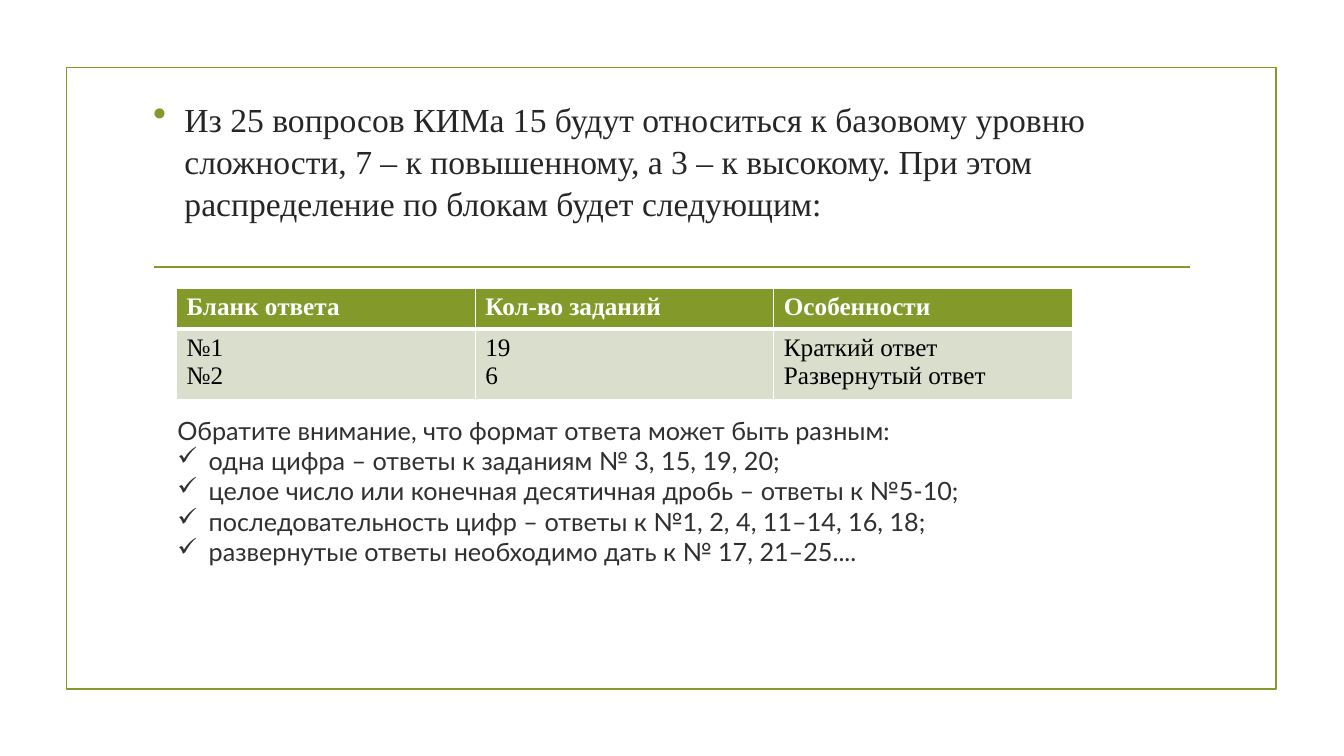
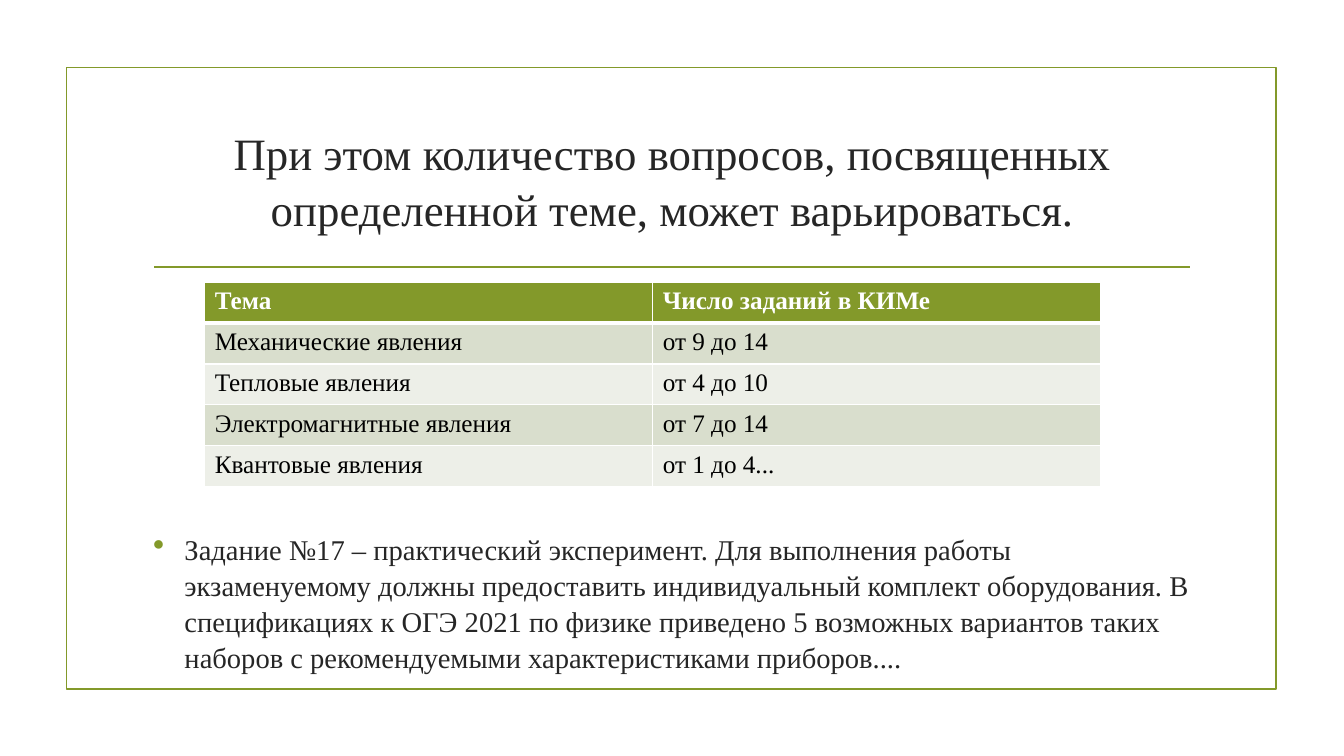
from pptx import Presentation
from pptx.dml.color import RGBColor
from pptx.enum.shapes import MSO_CONNECTOR as Connector, MSO_SHAPE as Shape
from pptx.enum.text import MSO_ANCHOR as Anchor, PP_ALIGN as Align
from pptx.oxml.ns import qn
from pptx.util import Cm, Pt
from lxml.etree import SubElement

GREEN, WHITE, BLACK = "83992A", "FFFFFF", "000000"
INK, NOTE_INK = "262626", "303030"
BANDS = ("D9DECD", "EDEFE8")
SERIF, SANS = "Times New Roman", "Lato"
CONTENT_LEFT, CONTENT_WIDTH = 3.61, 26.67
INDENT = 0.79
ROW_HEIGHT, TABLE_WIDTH = 1.03, 22.58


def color(value):
    return RGBColor.from_string(value)


def add_bullet(para, char, tint=None, percent=None):
    props = para._p.get_or_add_pPr()
    props.set("marL", str(Cm(INDENT)))
    props.set("indent", str(-Cm(INDENT)))
    if tint:
        SubElement(SubElement(props, qn("a:buClr")), qn("a:srgbClr"), val=tint)
    if percent:
        SubElement(props, qn("a:buSzPct"), val=str(percent * 1000))
    SubElement(props, qn("a:buChar"), char=char)


def add_border(cell, side, points):
    line = SubElement(cell._tc.get_or_add_tcPr(), qn("a:ln" + side), w=str(Pt(points)))
    SubElement(SubElement(line, qn("a:solidFill")), qn("a:srgbClr"), val=WHITE)


class Slides:
    """Holds the shared style and the current page."""

    def __init__(self):
        self.deck = Presentation()
        self.deck.slide_width, self.deck.slide_height = Cm(33.87), Cm(19.05)
        self.page = None

    def new_page(self):
        """Start a page with the green frame and the rule under the heading."""
        self.page = self.deck.slides.add_slide(self.deck.slide_layouts[6])
        frame = self.page.shapes.add_shape(
            Shape.RECTANGLE, Cm(1.68), Cm(1.7), Cm(30.48), Cm(15.67))
        frame.shadow.inherit = False
        frame.fill.background()
        rule = self.page.shapes.add_connector(
            Connector.STRAIGHT, Cm(3.89), Cm(6.73), Cm(30), Cm(6.73))
        SubElement(rule._element.spPr, qn("a:effectLst"))
        for outline in (frame.line, rule.line):
            outline.color.rgb = color(GREEN)
            outline.width = Pt(1.25)

    def text_box(self, left, top, width, height):
        box = self.page.shapes.add_textbox(Cm(left), Cm(top), Cm(width), Cm(height))
        box.text_frame.word_wrap = True
        return box.text_frame

    def add_lines(self, frame, lines, size, ink, font=SERIF, bold=False):
        """Add one paragraph per line and return the paragraphs."""
        for number, line in enumerate(lines):
            para = frame.add_paragraph() if number else frame.paragraphs[0]
            span = para.add_run()
            span.text = line
            span.font.size, span.font.name, span.font.bold = Pt(size), font, bold
            span.font.color.rgb = color(ink)
        return frame.paragraphs

    def title(self, text):
        frame = self.text_box(CONTENT_LEFT, 2.72, CONTENT_WIDTH, 3.63)
        frame.vertical_anchor = Anchor.MIDDLE
        para = self.add_lines(frame, [text], 32, INK)[0]
        para.alignment = Align.CENTER
        para.line_spacing = 1.03

    def bullet_text(self, top, height, text, size):
        frame = self.text_box(CONTENT_LEFT, top, CONTENT_WIDTH, height)
        para = self.add_lines(frame, [text], size, INK)[0]
        para.line_spacing = 1.05
        add_bullet(para, "•", GREEN, 115)

    def checklist(self, left, top, width, height, intro, items):
        frame = self.text_box(left, top, width, height)
        paras = self.add_lines(frame, [intro, *items], 18, NOTE_INK, SANS)
        for para in paras[1:]:
            add_bullet(para, "✓")

    def table(self, left, top, rows):
        """Draw a banded table; each cell is a list of lines or one string."""
        columns = len(rows[0])
        table = self.page.shapes.add_table(
            len(rows), columns, Cm(left), Cm(top),
            Cm(TABLE_WIDTH), Cm(ROW_HEIGHT * len(rows))).table
        for column in table.columns:
            column.width = Cm(TABLE_WIDTH / columns)
        for r, row in enumerate(rows):
            header = r == 0
            for c, content in enumerate(row):
                cell = table.cell(r, c)
                for side in "LRTB":
                    thick = (side == "B" and r == 0) or (side == "T" and r == 1)
                    add_border(cell, side, 3 if thick else 1)
                cell.fill.solid()
                cell.fill.fore_color.rgb = color(GREEN if header else BANDS[(r - 1) % 2])
                lines = [content] if isinstance(content, str) else content
                self.add_lines(cell.text_frame, lines, 18,
                               WHITE if header else BLACK, bold=header)


def main():
    slides = Slides()

    slides.new_page()
    slides.bullet_text(
        2.31, 4.2,
        "Из 25 вопросов КИМа 15 будут относиться к базовому уровню сложности, "
        "7 – к повышенному, а 3 – к высокому. При этом распределение по блокам "
        "будет следующим:", 24)
    slides.table(4.45, 7.26, [
        ["Бланк ответа", "Кол-во заданий", "Особенности"],
        [["№1", "№2"], ["19", "6"], ["Краткий ответ", "Развернутый ответ"]],
    ])
    slides.checklist(
        4.22, 10.34, 25.25, 4.11,
        "Обратите внимание, что формат ответа может быть разным:", [
            "одна цифра – ответы к заданиям № 3, 15, 19, 20;",
            "целое число или конечная десятичная дробь – ответы к №5-10;",
            "последовательность цифр – ответы к №1, 2, 4, 11–14, 16, 18;",
            "развернутые ответы необходимо дать к № 17, 21–25....",
        ])

    slides.new_page()
    slides.title("При этом количество вопросов, посвященных определенной теме, "
                 "может варьироваться.")
    slides.bullet_text(
        13.23, 3.9,
        "Задание №17 – практический эксперимент. Для выполнения работы "
        "экзаменуемому должны предоставить индивидуальный комплект оборудования. "
        "В спецификациях к ОГЭ 2021 по физике приведено 5 возможных вариантов "
        "таких наборов с рекомендуемыми характеристиками приборов....", 20.4)
    slides.table(5.16, 7.11, [
        ["Тема", "Число заданий в КИМе"],
        ["Механические явления", "от 9 до 14"],
        ["Тепловые явления", "от 4 до 10"],
        ["Электромагнитные явления", "от 7 до 14"],
        ["Квантовые явления", "от 1 до 4..."],
    ])

    slides.deck.save("out.pptx")


if __name__ == "__main__":
    main()
